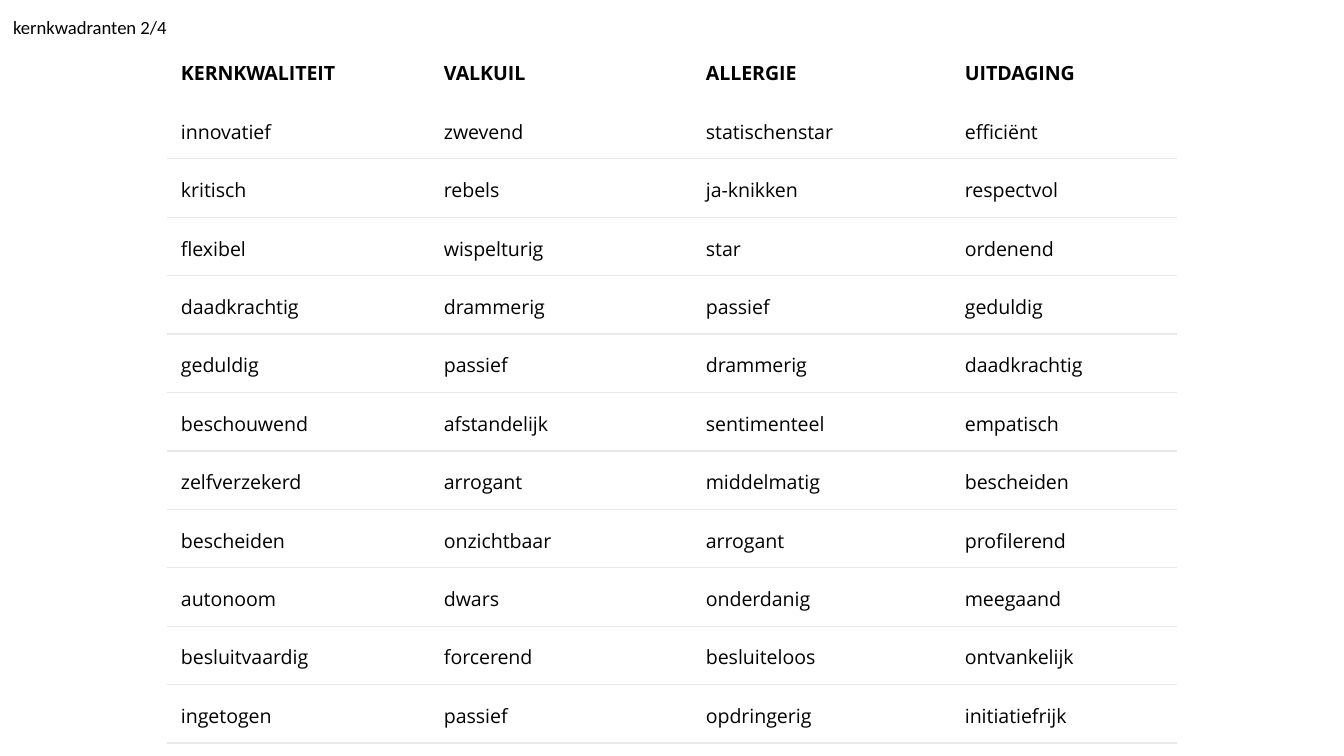
from lxml.etree import SubElement
from pptx import Presentation
from pptx.dml.color import RGBColor
from pptx.enum.text import MSO_ANCHOR, MSO_AUTO_SIZE, PP_ALIGN
from pptx.oxml.ns import qn
from pptx.util import Emu, Pt

BLACK = RGBColor(0x00, 0x00, 0x00)
WHITE = RGBColor(0xFF, 0xFF, 0xFF)
RULE_GREY = RGBColor(0xE9, 0xE9, 0xE9)

EMU_PER_PX = 914400 / 134.4
TITLE_INSET = 13
CELL_INSET = 14
TABLE_HEIGHT = 701
COLUMN_WIDTHS = [263, 262, 259, 226]
ROWS = [
    ("KERNKWALITEIT", "VALKUIL", "ALLERGIE", "UITDAGING"),
    ("innovatief", "zwevend", "statischenstar", "efficiënt"),
    ("kritisch", "rebels", "ja-knikken", "respectvol"),
    ("flexibel", "wispelturig", "star", "ordenend"),
    ("daadkrachtig", "drammerig", "passief", "geduldig"),
    ("geduldig", "passief", "drammerig", "daadkrachtig"),
    ("beschouwend", "afstandelijk", "sentimenteel", "empatisch"),
    ("zelfverzekerd", "arrogant", "middelmatig", "bescheiden"),
    ("bescheiden", "onzichtbaar", "arrogant", "profilerend"),
    ("autonoom", "dwars", "onderdanig", "meegaand"),
    ("besluitvaardig", "forcerend", "besluiteloos", "ontvankelijk"),
    ("ingetogen", "passief", "opdringerig", "initiatiefrijk"),
]


def px(length):
    return Emu(round(length * EMU_PER_PX))


def set_borders(cell, ruled_sides):
    """Rule the given sides (T, B) in grey and clear the others; call before filling."""
    properties = cell._tc.get_or_add_tcPr()
    for side in "LRTB":
        line = SubElement(properties, qn(f"a:ln{side}"), w=str(Pt(0.75)))
        if side in ruled_sides:
            fill = SubElement(line, qn("a:solidFill"))
            SubElement(fill, qn("a:srgbClr"), val=str(RULE_GREY))
        else:
            SubElement(line, qn("a:noFill"))


deck = Presentation()
deck.slide_width, deck.slide_height = px(1344), px(756)
page = deck.slides.add_slide(deck.slide_layouts[5])
page.background.fill.solid()
page.background.fill.fore_color.rgb = WHITE

# Table of core quadrants
frame = page.shapes.add_table(
    len(ROWS), len(COLUMN_WIDTHS),
    px(167), px(42), px(sum(COLUMN_WIDTHS)), px(TABLE_HEIGHT))
table = frame.table
table.first_row = False
table.horz_banding = False
for column, width in zip(table.columns, COLUMN_WIDTHS):
    column.width = px(width)

for row_index, words in enumerate(ROWS):
    table.rows[row_index].height = px(TABLE_HEIGHT / len(ROWS))
    ruled_sides = "" if row_index == 0 else "B" if row_index == 1 else "TB"
    for column_index, word in enumerate(words):
        cell = table.cell(row_index, column_index)
        set_borders(cell, ruled_sides)
        cell.fill.solid()
        cell.fill.fore_color.rgb = WHITE
        cell.margin_left = cell.margin_right = px(CELL_INSET)
        cell.margin_top = cell.margin_bottom = px(CELL_INSET)
        para = cell.text_frame.paragraphs[0]
        para.text = word
        para.line_spacing = 1.15
        font = para.runs[0].font
        font.name = "Open Sans"
        font.size = Pt(10.5)
        font.bold = row_index == 0
        font.color.rgb = BLACK

# Title
title = page.shapes.title
title.left, title.top, title.width, title.height = px(0), px(0), px(441), px(50)
text = title.text_frame
text.text = "kernkwadranten 2/4"
text.word_wrap = True
text.auto_size = MSO_AUTO_SIZE.SHAPE_TO_FIT_TEXT
text.vertical_anchor = MSO_ANCHOR.TOP
text.margin_left = text.margin_right = px(TITLE_INSET)
text.margin_top = text.margin_bottom = px(TITLE_INSET - 1)
para = text.paragraphs[0]
para.alignment = PP_ALIGN.LEFT
para.line_spacing = 1.15
para.space_before = Pt(0)
para.space_after = Pt(12)
font = para.runs[0].font
font.name = "Calibri"
font.size = Pt(10)
font.color.rgb = BLACK

deck.save("out.pptx")
